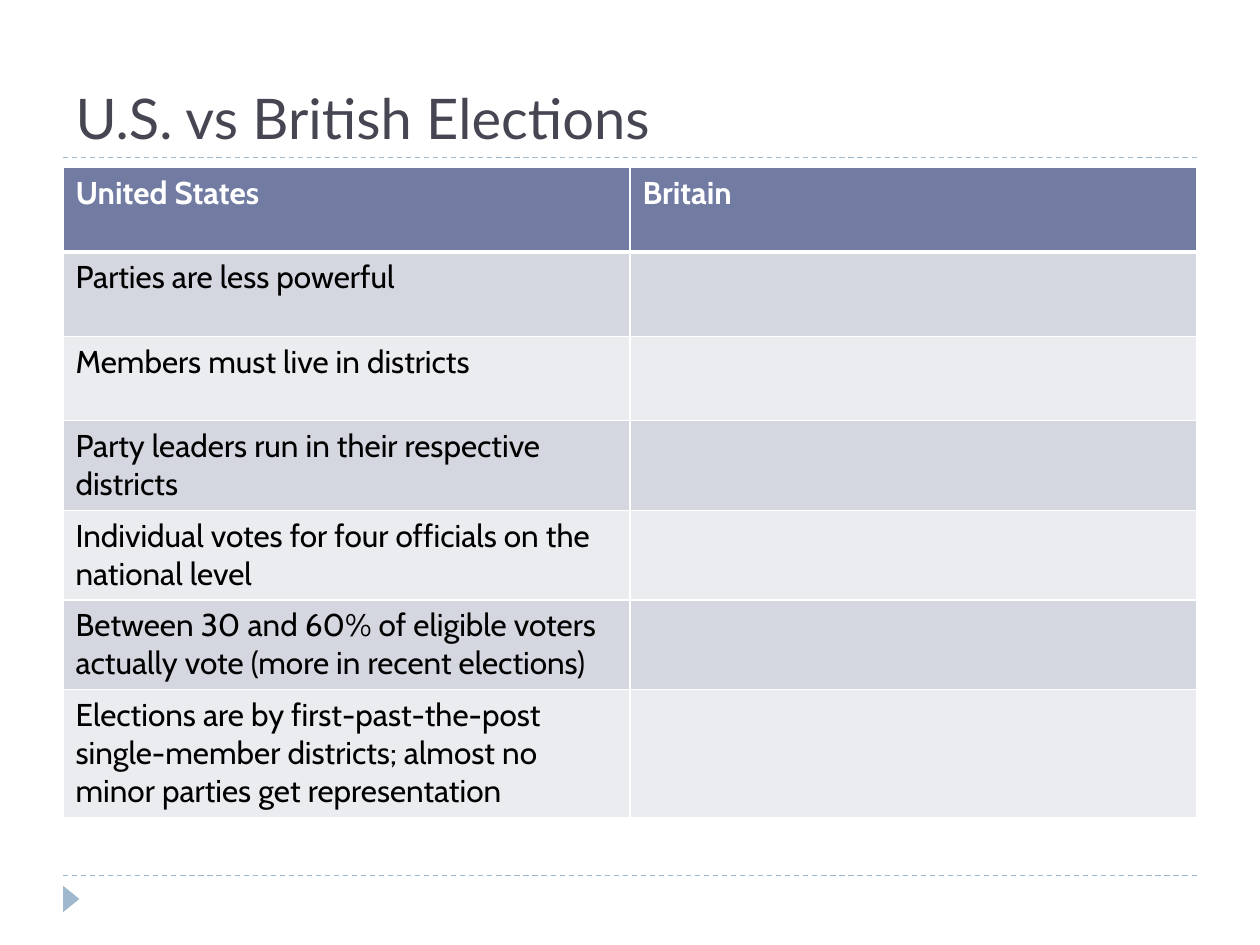
from dataclasses import dataclass

from lxml.etree import SubElement
from pptx import Presentation
from pptx.dml.color import RGBColor
from pptx.enum.dml import MSO_LINE
from pptx.enum.shapes import MSO_CONNECTOR, MSO_SHAPE
from pptx.enum.text import MSO_ANCHOR, PP_ALIGN
from pptx.oxml import parse_xml
from pptx.oxml.ns import nsdecls, qn
from pptx.slide import Slide
from pptx.table import _Cell
from pptx.util import Inches, Pt

WHITE = RGBColor(0xFF, 0xFF, 0xFF)
BLACK = RGBColor(0x00, 0x00, 0x00)
SLATE = RGBColor(0x46, 0x46, 0x53)
INDIGO = RGBColor(0x72, 0x7C, 0xA3)
BAND_DARK = RGBColor(0xD5, 0xD7, 0xE0)
BAND_LIGHT = RGBColor(0xEB, 0xEC, 0xF0)
PALE_BLUE = RGBColor(0x9F, 0xB8, 0xCD)

LEFT, WIDTH = 0.5, 9
ROW_HEIGHT = 0.67
THIN, THICK = 1, 3
RULE_TOPS = (1.25, 6.95)


@dataclass
class Comparison:
    united_states: str
    britain: str = ""


COMPARISONS = [
    Comparison("United States", "Britain"),
    Comparison("Parties are less powerful"),
    Comparison("Members must live in districts"),
    Comparison("Party leaders run in their respective districts"),
    Comparison("Individual votes for four officials on the national level"),
    Comparison("Between 30 and 60% of eligible voters actually vote (more in recent elections)"),
    Comparison(
        "Elections are by first-past-the-post single-member districts; "
        "almost no minor parties get representation"
    ),
]


def add_rule(slide: Slide, top: float) -> None:
    rule = slide.shapes.add_connector(
        MSO_CONNECTOR.STRAIGHT, Inches(LEFT), Inches(top), Inches(LEFT + WIDTH), Inches(top)
    )
    rule.line.color.rgb = PALE_BLUE
    rule.line.width = Pt(0.75)
    rule.line.dash_style = MSO_LINE.DASH
    SubElement(rule._element.spPr, qn("a:effectLst"))


def add_marker(slide: Slide) -> None:
    marker = slide.shapes.add_shape(
        MSO_SHAPE.ISOSCELES_TRIANGLE, Inches(0.46), Inches(7.07), Inches(0.21), Inches(0.13)
    )
    marker.rotation = 90
    marker.shadow.inherit = False
    marker.fill.solid()
    marker.fill.fore_color.rgb = PALE_BLUE
    marker.line.fill.background()


def add_title(slide: Slide, text: str) -> None:
    title = slide.shapes.title
    title.left, title.top = Inches(LEFT), Inches(0.17)
    title.width, title.height = Inches(WIDTH), Inches(1.08)
    frame = title.text_frame
    frame.text = text
    frame.vertical_anchor = MSO_ANCHOR.BOTTOM
    para = frame.paragraphs[0]
    para.alignment = PP_ALIGN.LEFT
    para.font.name = "Lato"
    para.font.size = Pt(32)
    para.font.color.rgb = SLATE


def set_borders(cell: _Cell, top: float, bottom: float) -> None:
    properties = cell._tc.get_or_add_tcPr()
    widths = {"lnL": THIN, "lnR": THIN, "lnT": top, "lnB": bottom}
    for position, (side, width) in enumerate(widths.items()):
        border = parse_xml(
            f'<a:{side} {nsdecls("a")} w="{Pt(width)}"><a:solidFill>'
            f'<a:srgbClr val="{WHITE}"/></a:solidFill></a:{side}>'
        )
        properties.insert(position, border)


def fill_cell(cell: _Cell, text: str, row: int) -> None:
    header = row == 0
    cell.text = text
    font = cell.text_frame.paragraphs[0].font
    font.name = "Cabin"
    font.size = Pt(18)
    font.bold = header
    font.color.rgb = WHITE if header else BLACK
    cell.fill.solid()
    band = BAND_DARK if row % 2 else BAND_LIGHT
    cell.fill.fore_color.rgb = INDIGO if header else band
    set_borders(cell, THICK if row == 1 else THIN, THICK if header else THIN)


def add_comparison_table(slide: Slide, comparisons: list[Comparison]) -> None:
    table = slide.shapes.add_table(
        len(comparisons), 2, Inches(LEFT), Inches(1.33),
        Inches(WIDTH), Inches(ROW_HEIGHT * len(comparisons)),
    ).table
    for row, comparison in enumerate(comparisons):
        table.rows[row].height = Inches(ROW_HEIGHT)
        for column, text in enumerate((comparison.united_states, comparison.britain)):
            fill_cell(table.cell(row, column), text, row)


def main() -> None:
    deck = Presentation()
    deck.slide_width, deck.slide_height = Inches(10), Inches(7.5)
    slide = deck.slides.add_slide(deck.slide_layouts[5])
    for top in RULE_TOPS:
        add_rule(slide, top)
    add_marker(slide)
    add_title(slide, "U.S. vs British Elections")
    add_comparison_table(slide, COMPARISONS)
    deck.save("out.pptx")


if __name__ == "__main__":
    main()
